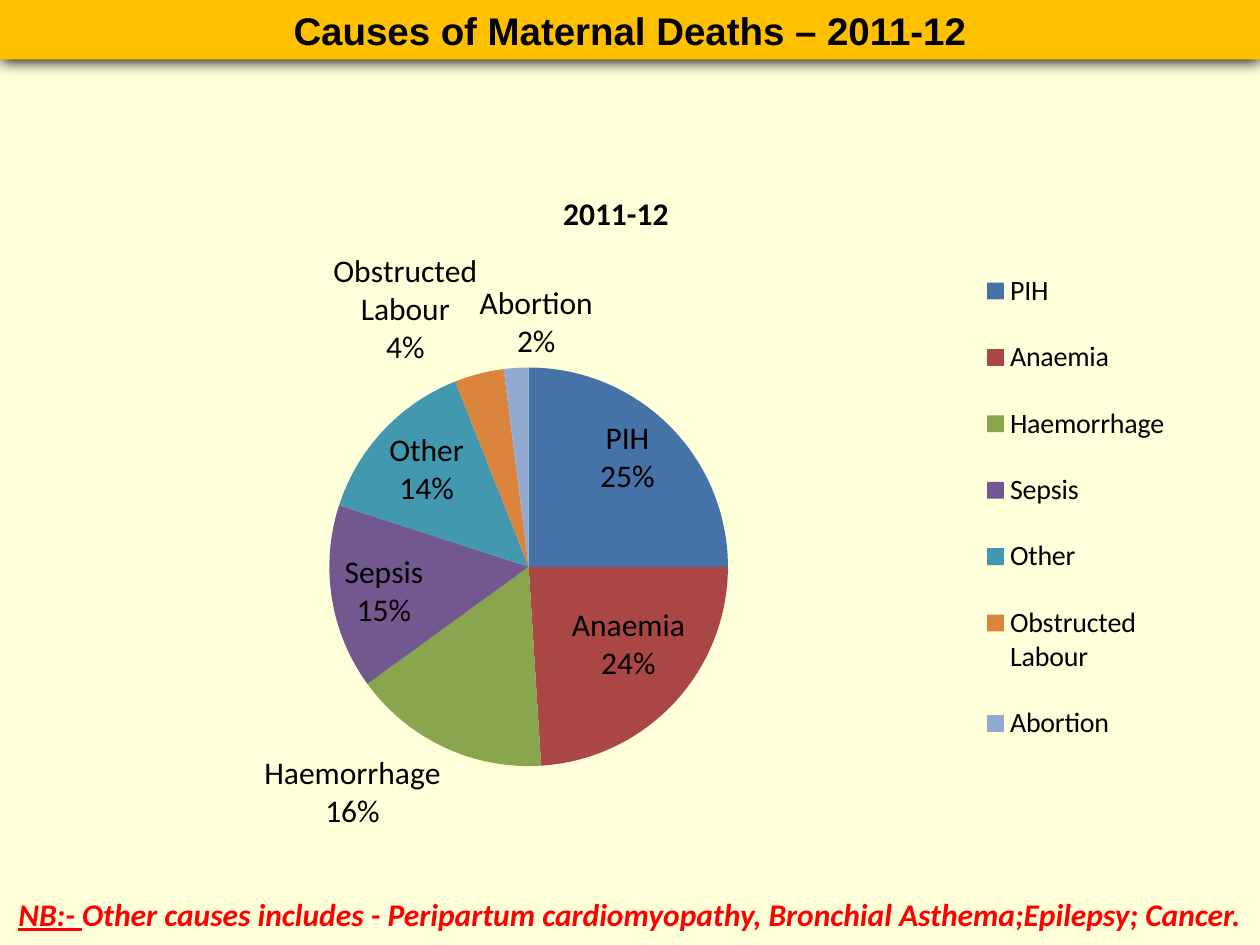
from dataclasses import dataclass

from lxml.etree import SubElement
from pptx import Presentation
from pptx.chart.data import CategoryChartData
from pptx.dml.color import RGBColor
from pptx.enum.chart import XL_CHART_TYPE as ChartType
from pptx.enum.chart import XL_LABEL_POSITION as LabelPosition
from pptx.enum.chart import XL_LEGEND_POSITION as LegendPosition
from pptx.enum.shapes import MSO_SHAPE as ShapeKind
from pptx.enum.text import MSO_ANCHOR as Anchor
from pptx.enum.text import PP_ALIGN as Align
from pptx.oxml import parse_xml
from pptx.oxml.ns import nsdecls, qn
from pptx.util import Cm, Pt

CREAM = RGBColor(0xFF, 0xFF, 0xDA)
AMBER = RGBColor(0xFF, 0xC0, 0x00)
BLACK = RGBColor(0x00, 0x00, 0x00)
RED = RGBColor(0xFF, 0x00, 0x00)
BLUE = RGBColor(0x45, 0x72, 0xA7)
BRICK = RGBColor(0xAA, 0x46, 0x43)
GREEN = RGBColor(0x89, 0xA5, 0x4E)
PURPLE = RGBColor(0x71, 0x58, 0x8F)
TEAL = RGBColor(0x41, 0x98, 0xAF)
ORANGE = RGBColor(0xDB, 0x84, 0x3D)
PALE_BLUE = RGBColor(0x93, 0xA9, 0xCF)

YEAR = "2011-12"
SLIDE_WIDTH = Cm(25.4)


@dataclass(frozen=True)
class Cause:
    name: str
    share: float
    color: RGBColor


@dataclass(frozen=True)
class Layout:
    """Position and size as fractions of the chart."""
    x: float
    y: float
    w: float | None = None
    h: float | None = None


CAUSES = [
    Cause("PIH", 0.25, BLUE),
    Cause("Anaemia", 0.24, BRICK),
    Cause("Haemorrhage", 0.16, GREEN),
    Cause("Sepsis", 0.15, PURPLE),
    Cause("Other", 0.14, TEAL),
    Cause("Obstructed Labour", 0.04, ORANGE),
    Cause("Abortion", 0.02, PALE_BLUE),
]


def style_font(font, size: float, color: RGBColor, name: str = "Calibri",
               bold: bool = False, italic: bool = False) -> None:
    font.name, font.size = name, Pt(size)
    font.bold, font.italic = bold, italic
    font.color.rgb = color


def set_layout(parent, layout: Layout, before: str, inner: bool = False) -> None:
    """Place a chart part by hand, ahead of the child element named."""
    for old in parent.findall(qn("c:layout")):
        parent.remove(old)
    element = parse_xml(f"<c:layout {nsdecls('c')}><c:manualLayout/></c:layout>")
    manual = element[0]
    if inner:
        SubElement(manual, qn("c:layoutTarget")).set("val", "inner")
    for axis in "xy":
        SubElement(manual, qn(f"c:{axis}Mode")).set("val", "edge")
    for key in "xywh":
        value = getattr(layout, key)
        if value is not None:
            SubElement(manual, qn(f"c:{key}")).set("val", str(value))
    parent.find(qn(before)).addprevious(element)


def add_banner(slide) -> None:
    shape = slide.shapes.add_shape(ShapeKind.RECTANGLE, 0, 0, SLIDE_WIDTH, Cm(1.2))
    shape.fill.solid()
    shape.fill.fore_color.rgb = AMBER
    shape.line.fill.background()
    shape.shadow.inherit = False
    effects = shape.element.spPr.find(qn("a:effectLst"))
    effects.append(parse_xml(
        f'<a:outerShdw {nsdecls("a")} blurRad="{Pt(8.5)}" dist="{Pt(1)}" '
        'dir="5400000" algn="t" rotWithShape="0"><a:srgbClr val="000000"/>'
        '</a:outerShdw>'))
    frame = shape.text_frame
    frame.text = f"Causes of Maternal Deaths – {YEAR}"
    frame.vertical_anchor = Anchor.MIDDLE
    paragraph = frame.paragraphs[0]
    paragraph.alignment = Align.CENTER
    style_font(paragraph.runs[0].font, 22, BLACK, "Arial", bold=True)


def add_footnote(slide) -> None:
    box = slide.shapes.add_textbox(0, Cm(17.91), SLIDE_WIDTH, Cm(1.02))
    box.text_frame.word_wrap = True
    paragraph = box.text_frame.paragraphs[0]
    paragraph.text = "NB:- "
    paragraph.alignment = Align.CENTER
    paragraph.add_run().text = ("Other causes includes - Peripartum cardiomyopathy, "
                                "Bronchial Asthema;Epilepsy; Cancer.")
    for run in paragraph.runs:
        style_font(run.font, 18, RED, bold=True, italic=True)
    paragraph.runs[0].font.underline = True


def add_pie(slide) -> None:
    data = CategoryChartData(number_format="0%")
    data.categories = [cause.name for cause in CAUSES]
    data.add_series(YEAR, [cause.share for cause in CAUSES])
    chart = slide.shapes.add_chart(ChartType.PIE, Cm(0.79), Cm(3.18),
                                   Cm(23.22), Cm(14.1), data).chart
    style_font(chart.font, 10, BLACK)

    # Title
    chart.has_title = True
    title = chart.chart_title
    title.text_frame.text = YEAR
    style_font(title.text_frame.paragraphs[0].runs[0].font, 18, BLACK, bold=True)
    title.include_in_layout = False
    set_layout(title._element, Layout(0.45, 0.04), "c:overlay")

    # Legend
    chart.has_legend = True
    legend = chart.legend
    legend.position = LegendPosition.RIGHT
    legend.include_in_layout = False
    style_font(legend.font, 16, BLACK)
    set_layout(legend._element, Layout(0.81, 0.12, 0.18, 0.76), "c:overlay")

    # Slices
    plot = chart.plots[0]
    plot.vary_by_categories = True
    set_layout(plot._element.getparent(), Layout(0.25, 0.3, 0.35, 0.57),
               "c:pieChart", inner=True)
    series = plot.series[0]
    for index, cause in enumerate(CAUSES):
        fill = series.points[index].format.fill
        fill.solid()
        fill.fore_color.rgb = cause.color

    # Labels: name above value
    labels = series.data_labels
    labels.show_category_name = labels.show_value = True
    labels.show_percentage = False
    labels.number_format, labels.number_format_is_linked = "0%", False
    labels.position = LabelPosition.BEST_FIT
    style_font(labels.font, 18, BLACK)
    separator = parse_xml(f"<c:separator {nsdecls('c')}>\n</c:separator>")
    labels._element.find(qn("c:showBubbleSize")).addnext(separator)


def main() -> None:
    presentation = Presentation()
    presentation.slide_width, presentation.slide_height = SLIDE_WIDTH, Cm(19.05)
    slide = presentation.slides.add_slide(presentation.slide_layouts[6])
    slide.background.fill.solid()
    slide.background.fill.fore_color.rgb = CREAM
    add_banner(slide)
    add_footnote(slide)
    add_pie(slide)
    presentation.save("out.pptx")


if __name__ == "__main__":
    main()
